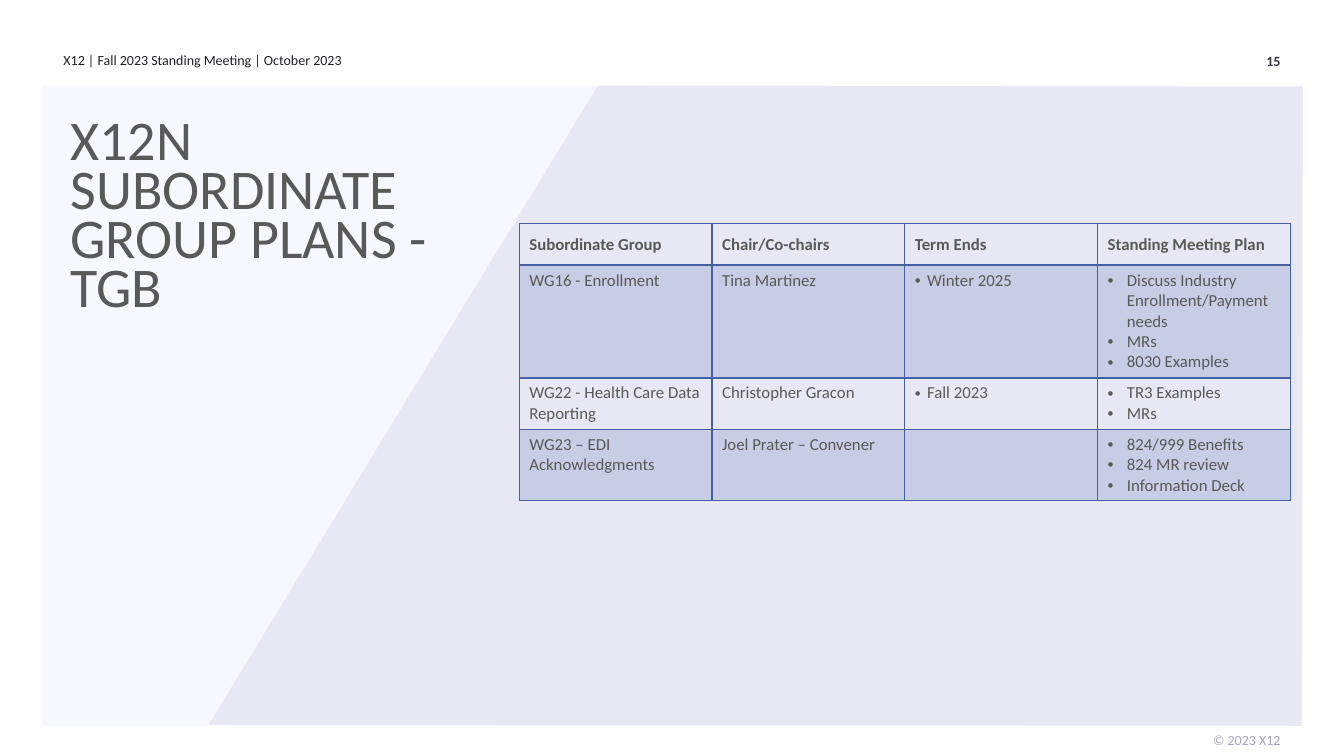
import pptx
import pptx.dml.color
import pptx.enum.shapes
import pptx.enum.text
import pptx.oxml
import pptx.oxml.ns
import pptx.util
from lxml import etree

Inches = pptx.util.Inches
Pt = pptx.util.Pt
ALIGN = pptx.enum.text.PP_ALIGN
ANCHOR = pptx.enum.text.MSO_ANCHOR

FONT = "Calibri"
GREY = "595959"
BLUE = "4361A3"
PANEL = "F7F7FF"
WEDGE = "E8E8F5"


def color(value):
    return pptx.dml.color.RGBColor.from_string(value)


def add_element(parent, tag, **attributes):
    element = etree.SubElement(parent, pptx.oxml.ns.qn(tag))
    for name, value in attributes.items():
        element.set(name, str(value))
    return element


def write(frame, text, size=12, fill=GREY, bold=False, align=ALIGN.LEFT,
          spacing=None, bullet=None):
    """Write one paragraph per line; bullet is the hanging indent in inches."""
    for index, line in enumerate(text.split("\n")):
        paragraph = frame.paragraphs[0] if index == 0 else frame.add_paragraph()
        paragraph.alignment = align
        if spacing:
            paragraph.line_spacing = spacing
        if bullet:
            properties = paragraph._p.get_or_add_pPr()
            properties.set("marL", str(Inches(bullet)))
            properties.set("indent", str(-Inches(bullet)))
            add_element(properties, "a:buFont", typeface="Arial")
            add_element(properties, "a:buChar", char="•")
        run = paragraph.add_run()
        run.text = line
        run.font.name = FONT
        run.font.size = Pt(size)
        run.font.bold = bold
        run.font.color.rgb = color(fill)


def prepare(frame, anchor=ANCHOR.TOP):
    frame.word_wrap = True
    frame.auto_size = pptx.enum.text.MSO_AUTO_SIZE.NONE
    frame.vertical_anchor = anchor
    frame.margin_left = frame.margin_right = 0
    frame.margin_top = frame.margin_bottom = 0


class SlideBuilder:
    def __init__(self, presentation):
        self.slide = presentation.slides.add_slide(presentation.slide_layouts[5])
        self.shapes = self.slide.shapes

    def paint(self, shape, fill):
        shape.shadow.inherit = False
        shape.fill.solid()
        shape.fill.fore_color.rgb = color(fill)
        shape.line.fill.background()

    def rectangle(self, left, top, width, height, fill):
        shape = self.shapes.add_shape(
            pptx.enum.shapes.MSO_SHAPE.RECTANGLE,
            Inches(left), Inches(top), Inches(width), Inches(height))
        self.paint(shape, fill)

    def polygon(self, points, fill):
        corners = [(Inches(x), Inches(y)) for x, y in points]
        builder = self.shapes.build_freeform(*corners[0])
        builder.add_line_segments(corners[1:], close=True)
        self.paint(builder.convert_to_shape(), fill)

    def text(self, left, top, width, height, text, **style):
        box = self.shapes.add_textbox(
            Inches(left), Inches(top), Inches(width), Inches(height))
        prepare(box.text_frame)
        write(box.text_frame, text, **style)

    def title(self, left, top, width, height, text, **style):
        title = self.shapes.title
        title.left, title.top = Inches(left), Inches(top)
        title.width, title.height = Inches(width), Inches(height)
        prepare(title.text_frame)
        write(title.text_frame, text, **style)
        # Bring the title in front of the background shapes
        title.element.getparent().append(title.element)

    def borders(self, cell, top, bottom):
        properties = cell._tc.get_or_add_tcPr()
        for side, width in (("L", 1), ("R", 1), ("T", top), ("B", bottom)):
            line = add_element(properties, "a:ln" + side, w=Pt(width))
            add_element(add_element(line, "a:solidFill"), "a:srgbClr", val=BLUE)

    def table(self, left, top, width, row_heights, rows, bullets):
        table = self.shapes.add_table(
            len(rows), len(rows[0]), Inches(left), Inches(top),
            Inches(width), Inches(sum(row_heights))).table
        table.horz_banding = False
        for row, height in zip(table.rows, row_heights):
            row.height = Inches(height)
        for r, values in enumerate(rows):
            header = r == 0
            for c, value in enumerate(values):
                cell = table.cell(r, c)
                cell.vertical_anchor = ANCHOR.MIDDLE if header else ANCHOR.TOP
                self.borders(cell, top=2 if r == 1 else 1, bottom=2 if header else 1)
                if r % 2:
                    cell.fill.solid()
                    cell.fill.fore_color.rgb = color(BLUE)
                    tint = cell._tc.tcPr.find(
                        "a:solidFill/a:srgbClr", pptx.oxml.ns._nsmap)
                    add_element(tint, "a:alpha", val=20000)
                else:
                    cell.fill.background()
                if value:
                    write(cell.text_frame, value, bold=header,
                          bullet=None if header else bullets[c])


def main():
    presentation = pptx.Presentation()
    presentation.slide_width = Inches(13.33)
    presentation.slide_height = Inches(7.5)
    builder = SlideBuilder(presentation)

    # Background panel and slanted wedge
    builder.rectangle(0.42, 0.85, 12.5, 6.35, PANEL)
    builder.polygon([(2.07, 7.19), (5.93, 0.85), (12.92, 0.86), (12.91, 7.2)], WEDGE)

    # Header and footer
    builder.text(0.63, 0.51, 4.5, 0.25,
                 "X12 | Fall 2023 Standing Meeting | October 2023",
                 size=10, fill="21212B")
    builder.text(11.19, 0.52, 1.51, 0.25, "15",
                 size=10, fill="363640", bold=True, align=ALIGN.RIGHT)
    builder.text(11.19, 7.26, 1.51, 0.25, "© 2023 X12",
                 size=10, fill="A6A6BA", align=ALIGN.RIGHT)

    # Title
    builder.title(0.7, 1.22, 3.69, 1.9, "X12N SUBORDINATE GROUP PLANS - TGB",
                  size=40, spacing=Pt(35))

    # Group plans
    plans = [
        ("Subordinate Group", "Chair/Co-chairs", "Term Ends", "Standing Meeting Plan"),
        ("WG16 - Enrollment", "Tina Martinez", "Winter 2025",
         "Discuss Industry Enrollment/Payment needs\nMRs\n8030 Examples"),
        ("WG22 - Health Care Data Reporting", "Christopher Gracon", "Fall 2023",
         "TR3 Examples\nMRs"),
        ("WG23 – EDI Acknowledgments", "Joel Prater – Convener", "",
         "824/999 Benefits\n824 MR review\nInformation Deck"),
    ]
    builder.table(5.15, 2.22, 7.65, [0.41, 1.12, 0.51, 0.7], plans,
                  bullets=[None, None, 0.12, 0.19])

    presentation.save("out.pptx")


if __name__ == "__main__":
    main()
